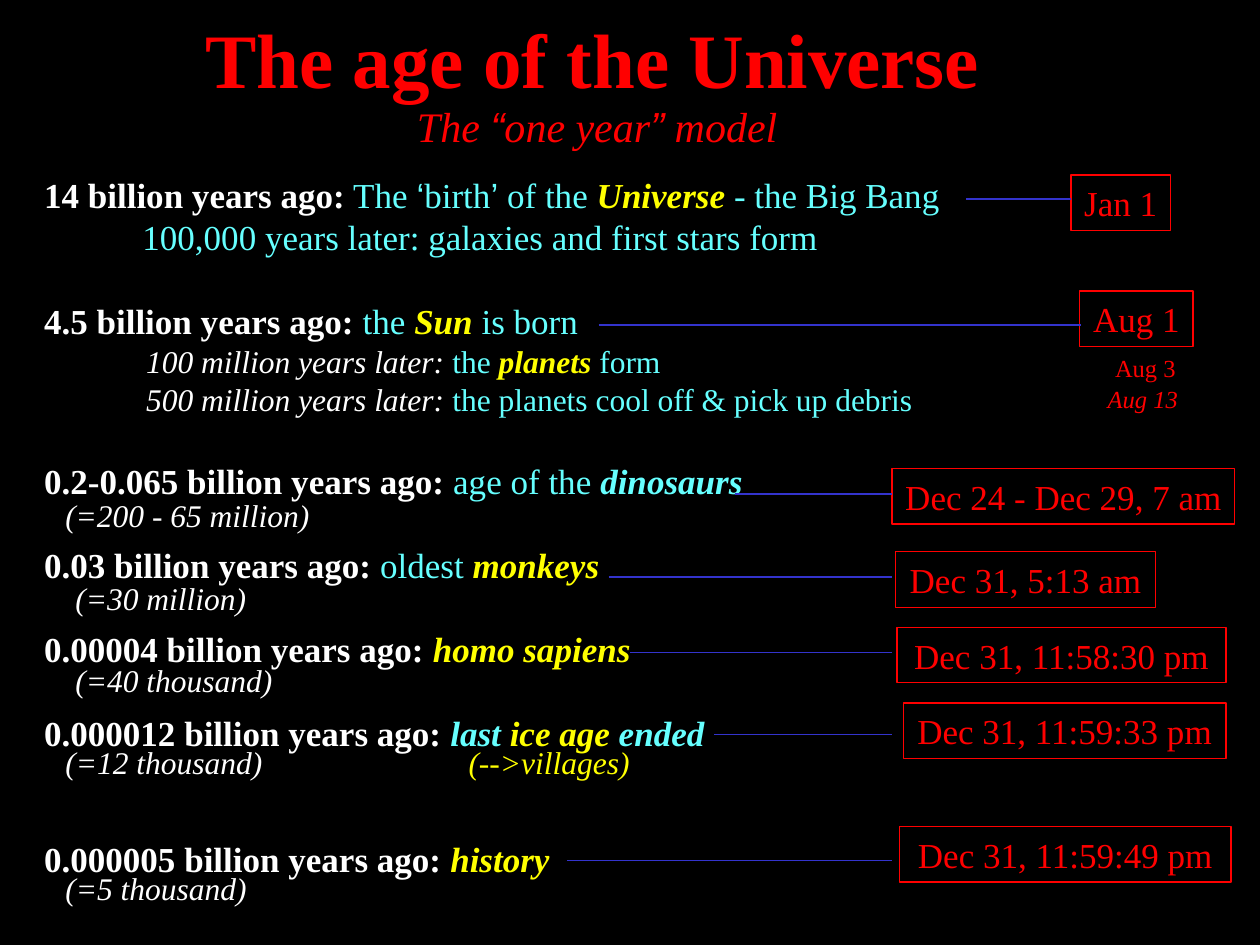
from dataclasses import dataclass

from lxml import etree
from pptx import Presentation
from pptx.dml.color import RGBColor
from pptx.enum.shapes import MSO_CONNECTOR, MSO_SHAPE
from pptx.enum.text import MSO_ANCHOR, MSO_AUTO_SIZE, PP_ALIGN
from pptx.oxml.ns import qn
from pptx.util import Inches, Pt

LEFT, CENTER = PP_ALIGN.LEFT, PP_ALIGN.CENTER
TOP, MIDDLE = MSO_ANCHOR.TOP, MSO_ANCHOR.MIDDLE
NO_FIT = MSO_AUTO_SIZE.NONE
RECT, STRAIGHT = MSO_SHAPE.RECTANGLE, MSO_CONNECTOR.STRAIGHT

COLORS = {"black": "000000", "red": "FF0000", "white": "FFFFFF",
          "cyan": "66FFFF", "yellow": "FFFF00", "blue": "3333CC"}
SERIF, SANS = "Times New Roman", "Arial"
LINE_HEIGHT = 1.2
BOX_HEIGHT = 0.44


@dataclass
class Run:
    text: str
    color: str = "cyan"
    bold: bool = False
    italic: bool = False
    font: str = SERIF


@dataclass
class Line:
    runs: list[Run]
    size: int = 20
    blanks_before: int = 0
    indent: float = 0


@dataclass
class Callout:
    text: str
    left: float
    top: float
    width: float
    line_x: float
    line_end: float
    line_y: float


@dataclass
class Note:
    text: str
    left: float
    top: float
    width: float
    color: str = "white"
    size: int = 18
    italic: bool = True
    align: PP_ALIGN = LEFT


def when(text: str) -> Run:
    return Run(text, "white", bold=True)


def key(text: str, color: str = "yellow") -> Run:
    return Run(text, color, bold=True, italic=True)


def later(text: str) -> Run:
    return Run(text, "white", italic=True)


TITLE = [Run("The age of the Universe", "red", bold=True)]
SUBTITLE = [Run(text, "red", italic=True, font=font) for text, font in (
    ("The ", SERIF), ("“", SANS), ("one year", SERIF), ("”", SANS), (" model", SERIF))]

TIMELINE = [
    Line([when("14 billion years ago:"), Run(" The "), Run("‘", font=SANS),
          Run("birth"), Run("’", font=SANS), Run(" of the "),
          key("Universe"), Run(" - the Big Bang")]),
    Line([Run("100,000 years later: galaxies and first stars form")], indent=0.78),
    Line([when("4.5 billion years ago:"), Run(" the "), key("Sun"),
          Run(" is born")], blanks_before=1),
    Line([later("100 million years later:"), Run(" the "), key("planets"),
          Run(" form")], size=18, indent=0.81),
    Line([later("500 million years later:"),
          Run(" the planets cool off & pick up debris")], size=18, indent=0.81),
    Line([when("0.2-0.065 billion years ago:"), Run(" age of the "),
          key("dinosaurs", "cyan")], blanks_before=1),
    Line([when("0.03 billion years ago:"), Run(" oldest "), key("monkeys")],
         blanks_before=1),
    Line([when("0.00004 billion years ago: "), key("homo sapiens")], blanks_before=1),
    Line([when("0.000012 billion years ago: "), key("last ", "cyan"),
          key("ice age"), key(" ended", "cyan")], blanks_before=1),
    Line([when("0.000005 billion years ago: "), key("history")], blanks_before=2),
]

CALLOUTS = [
    Callout("Jan 1", 8.5, 1.39, 0.79, 7.67, 8.5, 1.58),
    Callout("Aug 1", 8.57, 2.31, 0.9, 4.75, 8.58, 2.58),
    Callout("Dec 24 - Dec 29, 7 am", 7.08, 3.72, 2.72, 5.83, 7.08, 3.92),
    Callout("Dec 31, 5:13 am", 7.11, 4.38, 2.06, 4.83, 7.08, 4.58),
    Callout("Dec 31, 11:58:30 pm", 7.12, 4.98, 2.61, 5, 7.08, 5.18),
    Callout("Dec 31, 11:59:33 pm", 7.17, 5.58, 2.56, 5.67, 7.08, 5.83),
    Callout("Dec 31, 11:59:49 pm", 7.14, 6.56, 2.63, 4.5, 7.08, 6.83),
]

NOTES = [
    Note("Aug 3", 8.6, 2.75, 0.98, "red", 14, False, CENTER),
    Note("Aug 13", 8.58, 3, 0.98, "red", 14, True, CENTER),
    Note("(=200 - 65 million)", 0.42, 3.89, 2.16),
    Note("(=30 million)", 0.5, 4.55, 1.56),
    Note("(=40 thousand)", 0.5, 5.2, 1.78),
    Note("(=12 thousand)", 0.42, 5.85, 1.78),
    Note("(-->villages)", 3.62, 5.85, 1.49, "yellow"),
    Note("(=5 thousand)", 0.42, 6.85, 1.65),
]


def rgb(name: str) -> RGBColor:
    return RGBColor.from_string(COLORS[name])


def place(sp, left: float, top: float, width: float, height: float) -> None:
    sp.left, sp.top = Inches(left), Inches(top)
    sp.width, sp.height = Inches(width), Inches(height)


def add_runs(p, runs: list[Run], size: int, align: PP_ALIGN = LEFT) -> None:
    p.alignment = align
    for run in runs:
        r = p.add_run()
        r.text = run.text
        r.font.name, r.font.size = run.font, Pt(size)
        r.font.bold, r.font.italic = run.bold, run.italic
        r.font.color.rgb = rgb(run.color)


def set_frame(tf, anchor: MSO_ANCHOR, wrap: bool) -> None:
    tf.auto_size, tf.word_wrap, tf.vertical_anchor = NO_FIT, wrap, anchor


def add_label(s, runs: list[Run], size: int, align: PP_ALIGN,
              box: tuple[float, float, float, float]) -> None:
    tf = s.shapes.add_textbox(*map(Inches, box)).text_frame
    set_frame(tf, TOP, False)
    add_runs(tf.paragraphs[0], runs, size, align)


def fill_timeline(tf, lines: list[Line]) -> None:
    set_frame(tf, TOP, True)
    for i, line in enumerate(lines):
        p = tf.paragraphs[0] if i == 0 else tf.add_paragraph()
        p.line_spacing = Pt(line.size * LINE_HEIGHT)
        p.space_before = Pt(line.blanks_before * 20 * LINE_HEIGHT)
        add_runs(p, line.runs, line.size)
        pPr = p._p.get_or_add_pPr()
        pPr.set("marL", str(Inches(line.indent or 0.5)))
        pPr.set("indent", str(Inches(0 if line.indent else -0.5)))
        etree.SubElement(pPr, qn("a:buNone"))


def add_callout(s, c: Callout) -> None:
    sp = s.shapes.add_shape(RECT, *map(Inches, (c.left, c.top, c.width, BOX_HEIGHT)))
    sp.shadow.inherit = False
    sp.fill.background()
    sp.line.color.rgb, sp.line.width = rgb("red"), Pt(0.75)
    set_frame(sp.text_frame, MIDDLE, False)
    add_runs(sp.text_frame.paragraphs[0], [Run(c.text, "red")], 20, CENTER)

    link = s.shapes.add_connector(
        STRAIGHT, *map(Inches, (c.line_x, c.line_y, c.line_end, c.line_y)))
    link.line.color.rgb, link.line.width = rgb("blue"), Pt(0.75)
    etree.SubElement(link._element.spPr, qn("a:effectLst"))


def main() -> None:
    prs = Presentation()
    prs.slide_width, prs.slide_height = Inches(10), Inches(7.5)
    s = prs.slides.add_slide(prs.slide_layouts[1])
    s.background.fill.solid()
    s.background.fill.fore_color.rgb = rgb("black")

    # Title and subtitle
    title, body = s.shapes.title, s.placeholders[1]
    place(title, 0.83, 0.08, 7.75, 0.75)
    set_frame(title.text_frame, MIDDLE, True)
    add_runs(title.text_frame.paragraphs[0], TITLE, 44, CENTER)
    add_label(s, SUBTITLE, 24, CENTER, (3.14, 0.75, 3.2, 0.51))

    # Timeline list
    place(body, 0.25, 1.33, 7.92, 5.76)
    fill_timeline(body.text_frame, TIMELINE)

    # Calendar dates and small notes
    for callout in CALLOUTS:
        add_callout(s, callout)
    for n in NOTES:
        height = 0.4 if n.size == 18 else 0.33
        add_label(s, [Run(n.text, n.color, italic=n.italic)], n.size, n.align,
                  (n.left, n.top, n.width, height))

    prs.save("out.pptx")


if __name__ == "__main__":
    main()
